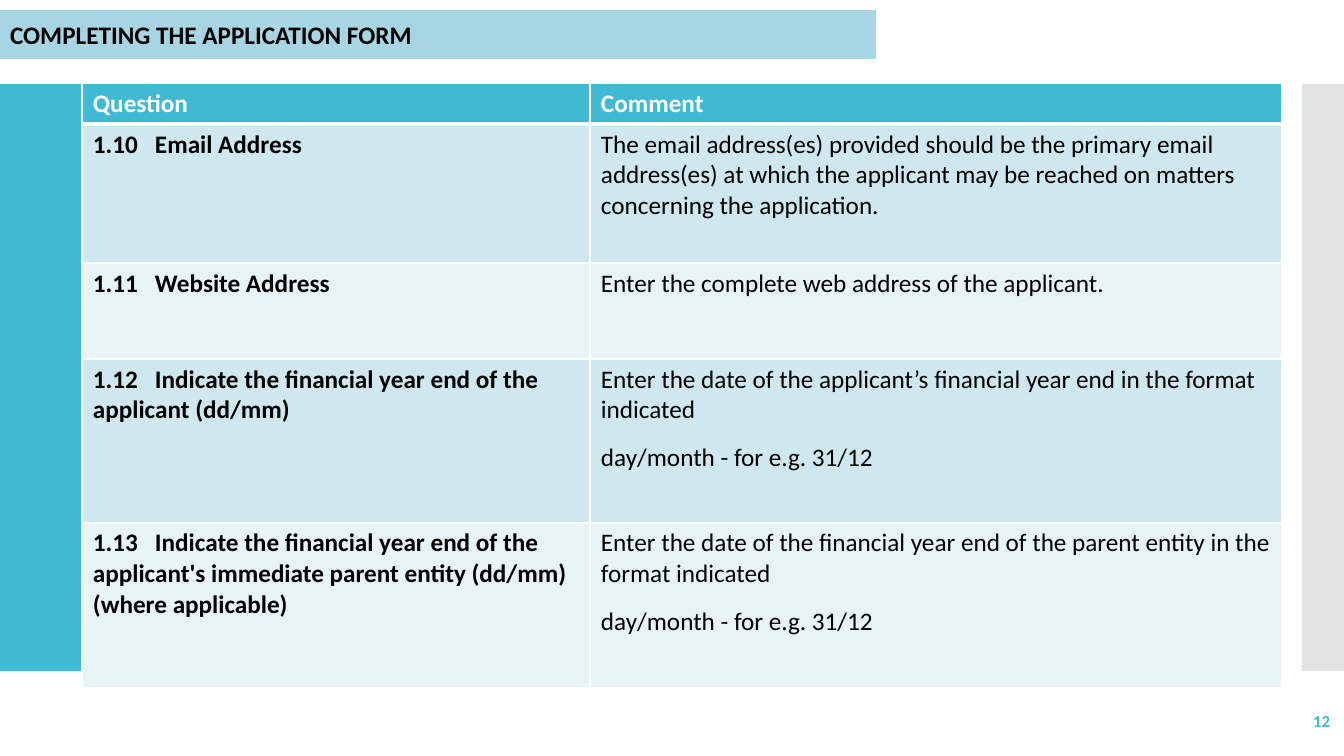
from pptx import Presentation
from pptx.dml.color import RGBColor as RGB
from pptx.enum.shapes import MSO_SHAPE as Shape
from pptx.enum.text import MSO_ANCHOR as Anchor, PP_ALIGN as Align
from pptx.oxml import parse_xml
from pptx.oxml.ns import nsdecls
from pptx.util import Pt

THEME = {
    "font": "Calibri", "body": 18, "small": 12,
    "teal": "40BAD2", "bar": "A7D5E3", "grey": "E3E3E3",
    "odd": "CFE7EE", "even": "E8F3F7", "ink": "000000", "white": "FFFFFF",
}


def px(n):
    return round(n * 914400 / 100.8)


def style(para, size, color, bold):
    for run in para.runs:
        font = run.font
        font.name, font.size, font.bold = THEME["font"], Pt(THEME[size]), bold
        font.color.rgb = RGB.from_string(THEME[color])


deck = Presentation()
deck.slide_width, deck.slide_height = px(1344), px(756)
slide = deck.slides.add_slide(deck.slide_layouts[5])
shapes = slide.shapes

# Side panels
for left, width, color in [(0, 380, "teal"), (1302, 42, "grey")]:
    panel = shapes.add_shape(Shape.RECTANGLE, px(left), px(84), px(width), px(587))
    panel.shadow.inherit = False
    panel.fill.solid()
    panel.fill.fore_color.rgb = RGB.from_string(THEME[color])
    panel.line.fill.background()

# Title in a bar with snipped corners
title = shapes.title
title.left, title.top, title.width, title.height = px(0), px(10), px(876), px(49)
title.element.spPr.append(parse_xml(
    f'<a:prstGeom {nsdecls("a")} prst="snip2DiagRect"><a:avLst/></a:prstGeom>'))
title.fill.solid()
title.fill.fore_color.rgb = RGB.from_string(THEME["bar"])
frame = title.text_frame
frame.text = "COMPLETING THE APPLICATION FORM"
frame.vertical_anchor = Anchor.MIDDLE
frame.paragraphs[0].alignment = Align.LEFT
style(frame.paragraphs[0], "body", "ink", True)

# Slide number
box = shapes.add_textbox(px(1172), px(701), px(168), px(40))
frame = box.text_frame
frame.word_wrap = True
frame.vertical_anchor = Anchor.MIDDLE
frame.text = "12"
frame.paragraphs[0].alignment = Align.RIGHT
style(frame.paragraphs[0], "small", "teal", True)

# Question table: question, comment, space after each comment paragraph
rows = [
    ("Question", "Comment", 0),
    ("1.10   Email Address",
     "The email address(es) provided should be the primary email address(es) "
     "at which the applicant may be reached on matters concerning the application.", 6),
    ("1.11   Website Address",
     "Enter the complete web address of the applicant.", 12),
    ("1.12   Indicate the financial year end of the applicant (dd/mm)",
     "Enter the date of the applicant’s financial year end in the format indicated\n"
     "day/month - for e.g. 31/12", 12),
    ("1.13   Indicate the financial year end of the applicant's immediate "
     "parent entity (dd/mm) (where applicable)",
     "Enter the date of the financial year end of the parent entity in the format indicated\n"
     "day/month - for e.g. 31/12", 12),
]
wide, tall = [508, 692], [41, 139, 96, 164, 165]
table = shapes.add_table(len(rows), len(wide), px(82), px(83),
                         px(sum(wide)), px(sum(tall))).table
for col, width in zip(table.columns, wide):
    col.width = px(width)
for row, height in zip(table.rows, tall):
    row.height = px(height)

for r, (ask, note, gap) in enumerate(rows):
    head = r == 0
    fill = "teal" if head else "odd" if r % 2 else "even"
    for c, text in enumerate((ask, note)):
        cell = table.cell(r, c)
        cell.margin_left = cell.margin_right = px(11)
        # White borders, with a heavy rule under the header
        props = cell._tc.get_or_add_tcPr()
        for side in "LRTB":
            heavy = (r, side) in [(0, "B"), (1, "T")]
            props.append(parse_xml(
                f'<a:ln{side} {nsdecls("a")} w="{Pt(3 if heavy else 1)}"><a:solidFill>'
                f'<a:srgbClr val="{THEME["white"]}"/></a:solidFill></a:ln{side}>'))
        cell.fill.solid()
        cell.fill.fore_color.rgb = RGB.from_string(THEME[fill])
        cell.text_frame.text = text
        for para in cell.text_frame.paragraphs:
            if c:
                para.space_after = Pt(gap)
            style(para, "body", "white" if head else "ink", head or c == 0)

deck.save("out.pptx")
